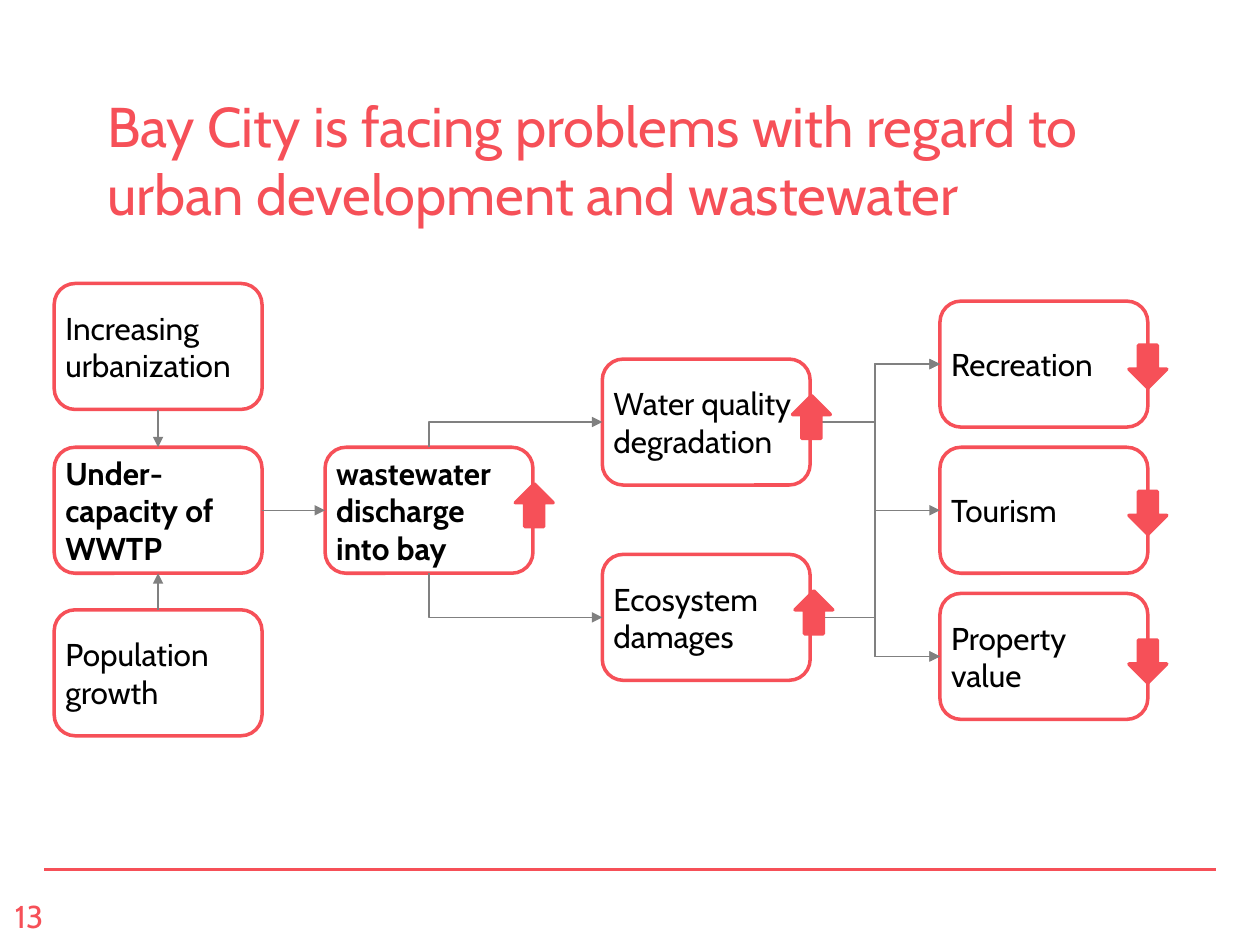
"""Build the slide on Bay City's urban development and wastewater problems."""
import pptx
import pptx.dml.color
import pptx.enum.shapes
import pptx.enum.text
import pptx.oxml
import pptx.oxml.ns
import pptx.util

Inches = pptx.util.Inches
Pt = pptx.util.Pt
SHAPES = pptx.enum.shapes.MSO_SHAPE
CONNECTORS = pptx.enum.shapes.MSO_CONNECTOR
ANCHORS = pptx.enum.text.MSO_ANCHOR

FONT = "Cabin"
RED, GREY, BLACK, WHITE = "F65058", "808080", "000000", "FFFFFF"
BOX_WIDTH, BOX_HEIGHT = 1.65, 1
ARROW_WIDTH, ARROW_HEIGHT = 0.34, 0.3
TOP, LEFT, BOTTOM, RIGHT = range(4)
UP, DOWN = 270, 90
CAUSE_LEFT, DISCHARGE_LEFT, IMPACT_LEFT, EFFECT_LEFT = 0.43, 2.58, 4.78, 7.46
MIDDLE_TOP = 3.55

BOXES = {
    "urbanization": ("Increasing urbanization", CAUSE_LEFT, 2.25, False),
    "capacity": ("Under-capacity of WWTP", CAUSE_LEFT, MIDDLE_TOP, True),
    "population": ("Population growth", CAUSE_LEFT, 4.84, False),
    "discharge": ("wastewater discharge into bay", DISCHARGE_LEFT, MIDDLE_TOP, True),
    "water": ("Water quality degradation", IMPACT_LEFT, 2.85, False),
    "ecosystem": ("Ecosystem damages", IMPACT_LEFT, 4.4, False),
    "recreation": ("Recreation", EFFECT_LEFT, 2.39, False),
    "tourism": ("Tourism", EFFECT_LEFT, MIDDLE_TOP, False),
    "property": ("Property value", EFFECT_LEFT, 4.71, False),
}
STRAIGHT_LINKS = [
    ("urbanization", BOTTOM, "capacity", TOP),
    ("population", TOP, "capacity", BOTTOM),
    ("capacity", RIGHT, "discharge", LEFT),
]
CORNER_LINKS = [("water", TOP), ("ecosystem", BOTTOM)]
ELBOW_LINKS = [
    ("water", "recreation"),
    ("water", "tourism"),
    ("water", "property"),
    ("ecosystem", "property"),
    ("ecosystem", "recreation"),
]
TRENDS = [
    (4.07, 3.86, UP),
    (6.27, 3.16, UP),
    (6.29, 4.71, UP),
    (8.94, 2.76, DOWN),
    (8.94, 3.92, DOWN),
    (8.94, 5.1, DOWN),
]


def color(value):
    """Return the colour for a hex string."""
    return pptx.dml.color.RGBColor.from_string(value)


def style_text(frame, text, size, value, bold=False):
    """Write one left-aligned paragraph in the slide's font."""
    frame.text = text
    frame.word_wrap = True
    para = frame.paragraphs[0]
    para.alignment = pptx.enum.text.PP_ALIGN.LEFT
    para.font.name = FONT
    para.font.size = Pt(size)
    para.font.bold = bold
    para.font.color.rgb = color(value)


def style_line(line, value, width):
    """Give a line its colour and width in points."""
    line.color.rgb = color(value)
    line.width = Pt(width)


def add_title(page, text):
    """Place and format the title placeholder."""
    title = page.shapes.title
    title.left, title.top = Inches(0.75), Inches(0.68)
    title.width, title.height = Inches(8.57), Inches(0.47)
    style_text(title.text_frame, text, 32, RED)
    title.text_frame.auto_size = pptx.enum.text.MSO_AUTO_SIZE.NONE
    title.text_frame.vertical_anchor = ANCHORS.TOP


def add_shape(page, kind, left, top, width, height, fill):
    """Add a red-outlined shape without shadow."""
    shape = page.shapes.add_shape(
        kind, Inches(left), Inches(top), Inches(width), Inches(height))
    shape.shadow.inherit = False
    shape.fill.solid()
    shape.fill.fore_color.rgb = color(fill)
    style_line(shape.line, RED, 2)
    return shape


def add_box(page, text, left, top, bold):
    """Add one rounded box of the cause-and-effect chain."""
    box = add_shape(page, SHAPES.ROUNDED_RECTANGLE, left, top,
                    BOX_WIDTH, BOX_HEIGHT, WHITE)
    frame = box.text_frame
    style_text(frame, text, 18, BLACK, bold)
    frame.vertical_anchor = ANCHORS.MIDDLE
    frame.margin_left = frame.margin_right = Inches(0.04)
    frame.margin_top = frame.margin_bottom = Inches(0.04)
    return box


def add_trend(page, left, top, rotation):
    """Add a block arrow that points up or down."""
    arrow = add_shape(page, SHAPES.RIGHT_ARROW, left, top,
                      ARROW_WIDTH, ARROW_HEIGHT, RED)
    arrow.rotation = rotation


def add_line(page, kind, value, width):
    """Add a connector without shadow."""
    line = page.shapes.add_connector(kind, 0, 0, 0, 0)
    style_line(line.line, value, width)
    pptx.oxml.ns.qn("a:effectLst")
    line.element.spPr.append(pptx.oxml.parse_xml(
        f"<a:effectLst {pptx.oxml.ns.nsdecls('a')}/>"))
    return line


def add_link(page, kind, source, source_site, target, target_site):
    """Connect two boxes with a grey arrow."""
    link = add_line(page, kind, GREY, 0.75)
    link.begin_connect(source, source_site)
    link.end_connect(target, target_site)
    link.line._get_or_add_ln().append(pptx.oxml.parse_xml(
        f"<a:tailEnd {pptx.oxml.ns.nsdecls('a')} type='triangle'/>"))
    return link


def add_corner_link(page, source, source_site, target):
    """Connect two boxes by a single corner, leaving the source vertically."""
    link = add_link(page, CONNECTORS.ELBOW, source, source_site, target, LEFT)
    upward = source_site == TOP
    center_x = link.left + link.width // 2
    center_y = link.top + link.height // 2
    link.width, link.height = link.height, link.width
    link.left = center_x - link.width // 2
    link.top = center_y - link.height // 2
    properties = link.element.spPr
    frame = properties.find(pptx.oxml.ns.qn("a:xfrm"))
    frame.set("rot", str((90 if upward else 270) * 60000))
    frame.set("flipH", "1")
    frame.set("flipV", "1" if upward else "0")
    properties.find(pptx.oxml.ns.qn("a:prstGeom")).set("prst", "bentConnector2")


def add_footer(page, number):
    """Add the rule and the page number at the bottom."""
    rule = add_line(page, CONNECTORS.STRAIGHT, RED, 1.5)
    rule.begin_x, rule.begin_y = Inches(0.35), Inches(6.9)
    rule.end_x, rule.end_y = Inches(9.65), Inches(6.9)
    box = page.shapes.add_textbox(
        Inches(0.02), Inches(7.07), Inches(1.1), Inches(0.4))
    style_text(box.text_frame, number, 18, RED)


def main():
    """Build and save the deck."""
    deck = pptx.Presentation()
    deck.slide_width, deck.slide_height = Inches(10), Inches(7.5)
    page = deck.slides.add_slide(deck.slide_layouts[5])
    add_title(page, "Bay City is facing problems with regard to "
                    "urban development and wastewater")
    add_footer(page, "13")
    boxes = {name: add_box(page, *details) for name, details in BOXES.items()}
    for source, source_site, target, target_site in STRAIGHT_LINKS:
        add_link(page, CONNECTORS.STRAIGHT, boxes[source], source_site,
                 boxes[target], target_site)
    for target, site in CORNER_LINKS:
        add_corner_link(page, boxes["discharge"], site, boxes[target])
    for source, target in ELBOW_LINKS:
        add_link(page, CONNECTORS.ELBOW, boxes[source], RIGHT,
                 boxes[target], LEFT)
    for trend in TRENDS:
        add_trend(page, *trend)
    deck.save("out.pptx")


if __name__ == "__main__":
    main()
